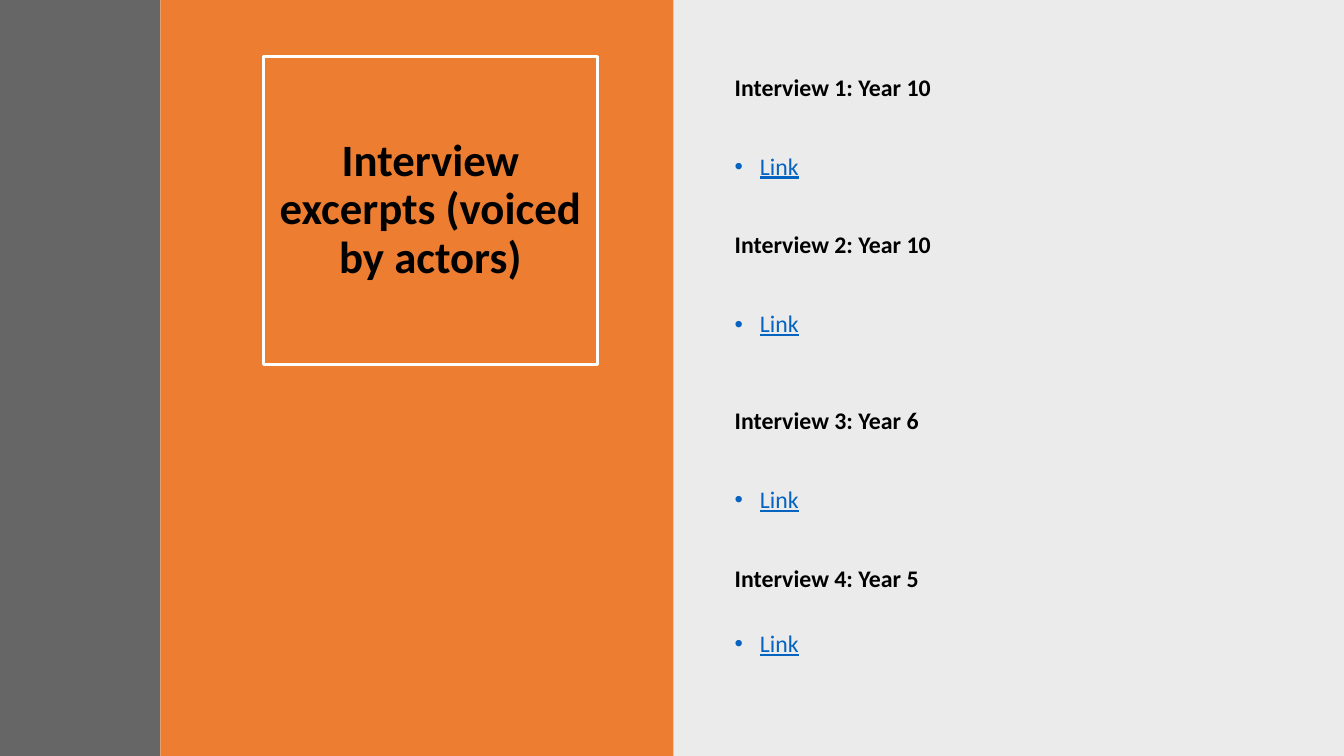
"""Build the slide that lists four interview excerpts beside a framed title."""
from lxml.etree import SubElement
from pptx import Presentation
from pptx.enum.shapes import MSO_SHAPE as Shape
from pptx.enum.text import MSO_ANCHOR as Anchor, MSO_AUTO_SIZE as AutoSize, PP_ALIGN as Align
from pptx.oxml.ns import qn
from pptx.util import Pt


def paint(fill, color):
    fill.solid()
    fill.fore_color.rgb = RGBColor.from_string(color)


def write(paragraph, text, size=17, color="000000", bold=False, underline=False,
          align=Align.LEFT, before=0, bullet=False):
    paragraph.alignment = align
    paragraph.line_spacing = 0.9
    paragraph.space_before = Pt(before)
    run = paragraph.add_run()
    run.text = text
    run.font.name = "Calibri"
    run.font.size = Pt(size)
    run.font.bold = bold
    run.font.underline = underline
    paint(run.font.fill, color)
    if bullet:
        properties = paragraph._p.get_or_add_pPr()
        properties.set("marL", str(Pt(18)))
        properties.set("indent", str(-Pt(18)))
        SubElement(properties, qn("a:buFont"), typeface="Arial")
        SubElement(properties, qn("a:buChar"), char="•")


from pptx.dml.color import RGBColor

deck = Presentation()
deck.slide_width, deck.slide_height = Pt(960), Pt(540)
slide = deck.slides.add_slide(deck.slide_layouts[5])

title = slide.shapes.title
title.left, title.top, title.width, title.height = Pt(188), Pt(40.3), Pt(239), Pt(220)
title.line.width = Pt(2)
paint(title.line.fill, "FFFFFF")
title.text_frame.word_wrap = True
title.text_frame.auto_size = AutoSize.NONE
title.text_frame.vertical_anchor = Anchor.MIDDLE
write(title.text_frame.paragraphs[0], "Interview excerpts (voiced by actors)",
      size=32, bold=True, align=Align.CENTER)

panels = [
    (480, 480, "000000", 8),
    (114.5, 366.5, "ED7D31", 100),
    (0, 114.5, "404040", 80),
]
for left, width, color, opacity in panels:
    panel = slide.shapes.add_shape(Shape.RECTANGLE, Pt(left), 0, Pt(width), Pt(540))
    panel.shadow.inherit = False
    panel.line.fill.background()
    paint(panel.fill, color)
    if opacity < 100:
        tint = panel.element.spPr.find(f"{qn('a:solidFill')}/{qn('a:srgbClr')}")
        SubElement(tint, qn("a:alpha"), val=str(opacity * 1000))
    if color == "ED7D31":
        panel.element.addnext(title.element)

interview_groups = [
    (50.4, [("Interview 1: Year 10", 38), ("Interview 2: Year 10", 38)]),
    (288.7, [("Interview 3: Year 6", 38), ("Interview 4: Year 5", 28)]),
]
for top, interviews in interview_groups:
    group = slide.shapes.add_textbox(Pt(517.7), Pt(top), Pt(398), Pt(201)).text_frame
    group.word_wrap = True
    for index, (heading, link_gap) in enumerate(interviews):
        heading_line = group.add_paragraph() if index else group.paragraphs[0]
        write(heading_line, heading, bold=True, before=38 * index)
        write(group.add_paragraph(), "Link", color="0563C1", underline=True,
              before=link_gap, bullet=True)

deck.save("out.pptx")
